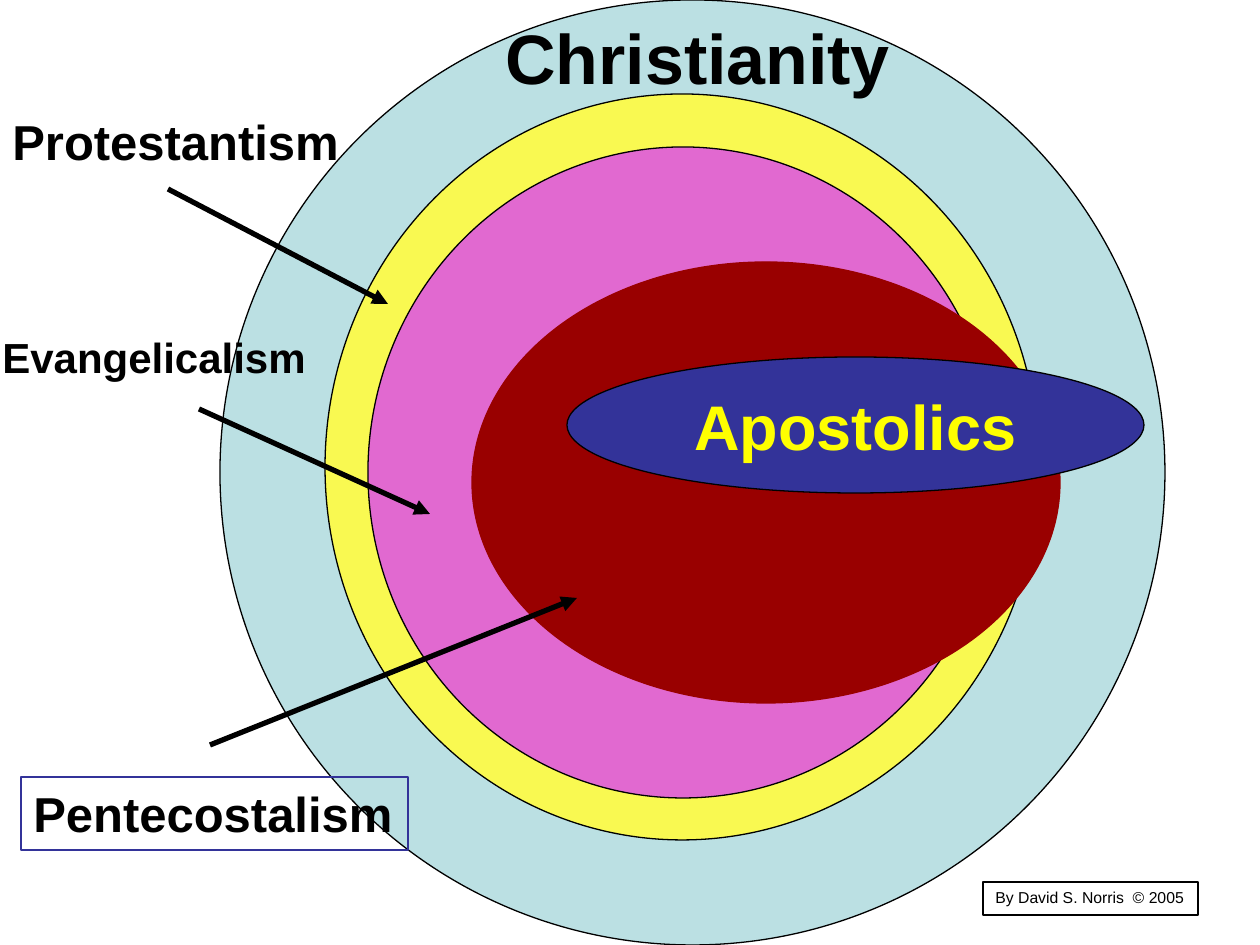
from lxml.etree import SubElement
from pptx import Presentation
from pptx.dml.color import RGBColor as Rgb
from pptx.enum.shapes import MSO_CONNECTOR as Conn, MSO_SHAPE as Kind
from pptx.enum.text import MSO_ANCHOR as Anchor, PP_ALIGN as Align
from pptx.oxml.ns import qn
from pptx.util import Pt

SCALE = 914400 / 126  # EMU in one px
COLORS = {
    "black": "000000",
    "aqua": "BBE0E3",
    "lemon": "F9F951",
    "pink": "E169D0",
    "red": "990000",
    "navy": "333399",
    "yellow": "FFFF00",
}


def emu(*sizes):
    return [round(size * SCALE) for size in sizes]


def tint(name):
    return Rgb.from_string(COLORS[name])


class Painter:
    font = "Arial"

    def __init__(self, slide):
        self.shapes = slide.shapes

    def letter(self, shape, text, size, color="black", bold=True, center=False):
        frame = shape.text_frame
        frame.word_wrap = False
        frame.vertical_anchor = Anchor.MIDDLE if center else Anchor.TOP
        frame.text = text
        para = frame.paragraphs[0]
        para.alignment = Align.CENTER if center else Align.LEFT
        para.font.name = self.font
        para.font.size = Pt(size)
        para.font.bold = bold
        para.font.color.rgb = tint(color)

    def shape(self, kind, box, fill=None, line="black"):
        shape = self.shapes.add_shape(kind, *emu(*box))
        shape.shadow.inherit = False
        if fill:
            shape.fill.solid()
            shape.fill.fore_color.rgb = tint(fill)
        else:
            shape.fill.background()
        shape.line.color.rgb = tint(line)
        shape.line.width = Pt(0.75)
        return shape

    def ring(self, box, fill, line="black"):
        self.shape(Kind.FLOWCHART_CONNECTOR, box, fill, line)

    def label(self, box, text, size):
        self.letter(self.shapes.add_textbox(*emu(*box)), text, size)

    def frame(self, box, text, size, line="black", bold=True):
        shape = self.shape(Kind.RECTANGLE, box, line=line)
        self.letter(shape, text, size, bold=bold)

    def arrow(self, *ends):
        arrow = self.shapes.add_connector(Conn.STRAIGHT, *emu(*ends))
        arrow.line.color.rgb = tint("black")
        arrow.line.width = Pt(3)
        props = arrow._element.spPr
        SubElement(props.find(qn("a:ln")), qn("a:tailEnd"), type="triangle")
        SubElement(props, qn("a:effectLst"))


def main():
    deck = Presentation()
    deck.slide_width, deck.slide_height = emu(1260, 945)
    art = Painter(deck.slides.add_slide(deck.slide_layouts[6]))

    # Outer rings
    art.ring((220, 0, 945, 945), "aqua")
    art.ring((325, 94, 714, 746), "lemon")
    art.ring((368, 147, 630, 651), "pink")

    # Ring names and their arrows
    art.label((493, 8, 411, 97), "Christianity", 40)
    art.label((0, 105, 353, 72), "Protestantism", 28)
    art.arrow(168, 189, 388, 304)
    art.label((-10, 325, 329, 63), "Evangelicalism", 24)
    art.arrow(199, 409, 430, 514)

    # Inner ring with its framed name
    art.ring((472, 262, 588, 441), "red", "red")
    art.frame((21, 777, 387, 73), "Pentecostalism", 28, line="navy")
    art.arrow(210, 745, 577, 598)

    # Core
    core = art.shape(Kind.OVAL, (567, 357, 577, 136), "navy")
    art.letter(core, "Apostolics", 36, "yellow", center=True)

    # Credit
    art.frame((983, 882, 215, 33), "By David S. Norris  © 2005", 9, bold=False)

    deck.save("out.pptx")


if __name__ == "__main__":
    main()
